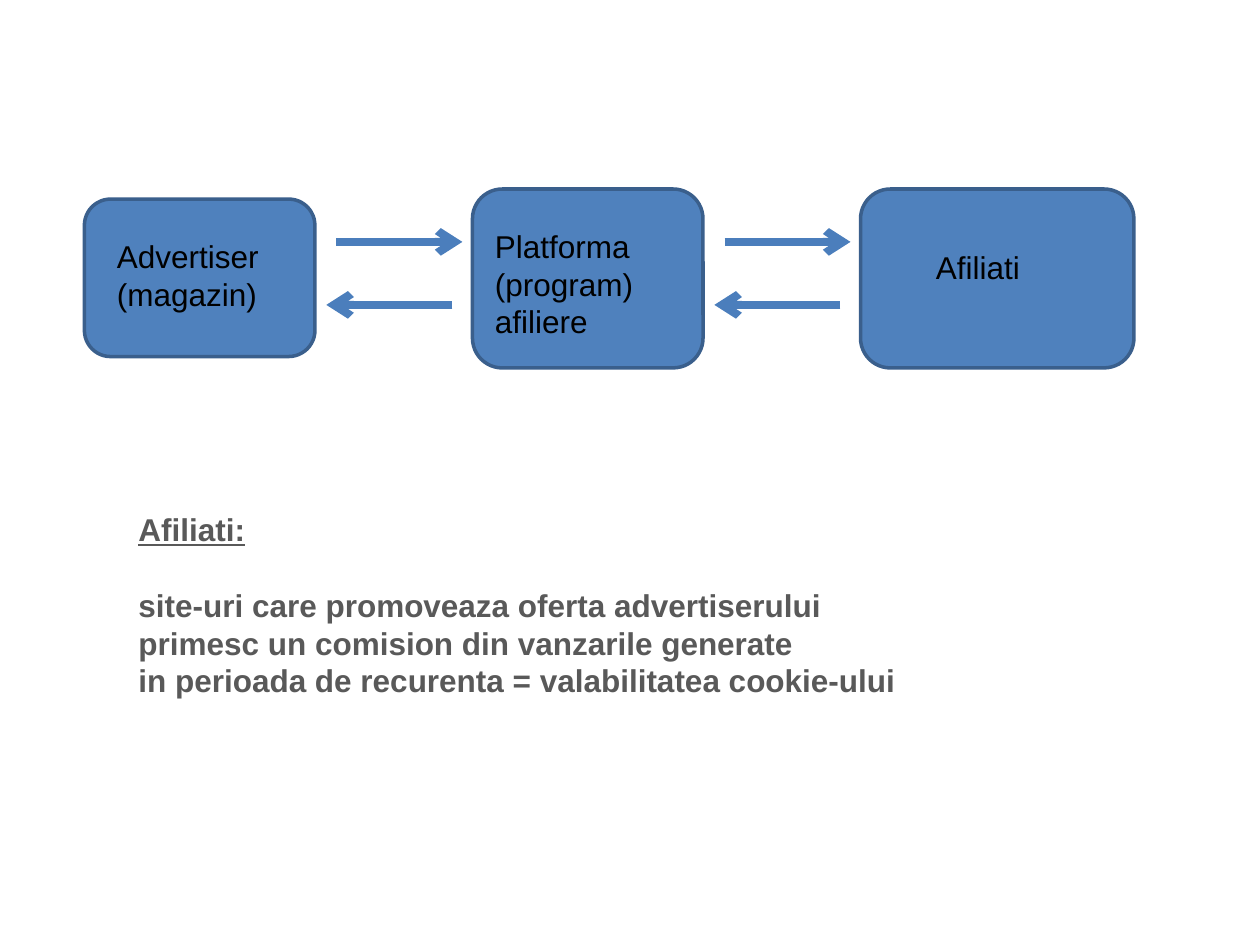
from lxml.etree import SubElement
from pptx import Presentation
from pptx.dml.color import RGBColor
from pptx.enum.shapes import MSO_CONNECTOR, MSO_SHAPE
from pptx.enum.text import MSO_AUTO_SIZE
from pptx.oxml.ns import qn
from pptx.util import Inches, Pt

COLORS = {
    "box": "4F81BD",
    "border": "3A5F8C",
    "arrow": "4B7EBC",
    "label": "000000",
    "note": "595959",
}


def color(name):
    return RGBColor.from_string(COLORS[name])


def add_box(slide, left, top, width, height):
    shape = slide.shapes.add_shape(
        MSO_SHAPE.ROUNDED_RECTANGLE,
        Inches(left), Inches(top), Inches(width), Inches(height),
    )
    shape.shadow.inherit = False
    shape.fill.solid()
    shape.fill.fore_color.rgb = color("box")
    shape.line.color.rgb = color("border")
    shape.line.width = Pt(2)


def add_arrow(slide, start, end, top):
    connector = slide.shapes.add_connector(
        MSO_CONNECTOR.STRAIGHT,
        Inches(start), Inches(top), Inches(end), Inches(top),
    )
    connector.line.color.rgb = color("arrow")
    connector.line.width = Pt(4.5)
    SubElement(connector.line._get_or_add_ln(), qn("a:tailEnd"), type="arrow")
    SubElement(connector._element.spPr, qn("a:effectLst"))


def add_text(slide, left, top, width, height, lines, color_name="label", bold=False):
    text_box = slide.shapes.add_textbox(
        Inches(left), Inches(top), Inches(width), Inches(height)
    )
    frame = text_box.text_frame
    frame.word_wrap = False
    frame.auto_size = MSO_AUTO_SIZE.SHAPE_TO_FIT_TEXT
    for index, line in enumerate(lines):
        paragraph = frame.paragraphs[0] if index == 0 else frame.add_paragraph()
        run = paragraph.add_run()
        run.text = line
        run.font.name = "Arial"
        run.font.size = Pt(18)
        run.font.bold = bold
        run.font.color.rgb = color(color_name)
    return frame


def add_note(slide):
    frame = add_text(slide, 1, 4, 6.35, 1.62, [
        "Afiliati:",
        "site-uri care promoveaza oferta advertiserului",
        "primesc un comision din vanzarile generate",
        "in perioada de recurenta = valabilitatea cookie-ului",
    ], "note", bold=True)
    heading, first_line = frame.paragraphs[:2]
    heading.runs[0].font.underline = True
    first_line.space_before = Pt(21.6)


def main():
    presentation = Presentation()
    presentation.slide_width = Inches(10)
    presentation.slide_height = Inches(7.5)
    slide = presentation.slides.add_slide(presentation.slide_layouts[6])

    add_box(slide, 0.67, 1.58, 1.83, 1.25)
    add_box(slide, 3.75, 1.5, 1.83, 1.42)
    add_box(slide, 6.83, 1.5, 2.17, 1.42)

    for left in (2.67, 5.75):
        add_arrow(slide, left, left + 1, 1.92)
        add_arrow(slide, left + 0.92, left - 0.08, 2.42)

    add_text(slide, 0.83, 1.83, 1.34, 0.71, ["Advertiser", "(magazin)"])
    add_text(slide, 3.83, 1.75, 1.38, 1.01, ["Platforma", "(program)", "afiliere"])
    add_text(slide, 7.33, 1.92, 0.88, 0.4, ["Afiliati"])
    add_note(slide)

    presentation.save("out.pptx")


if __name__ == "__main__":
    main()
